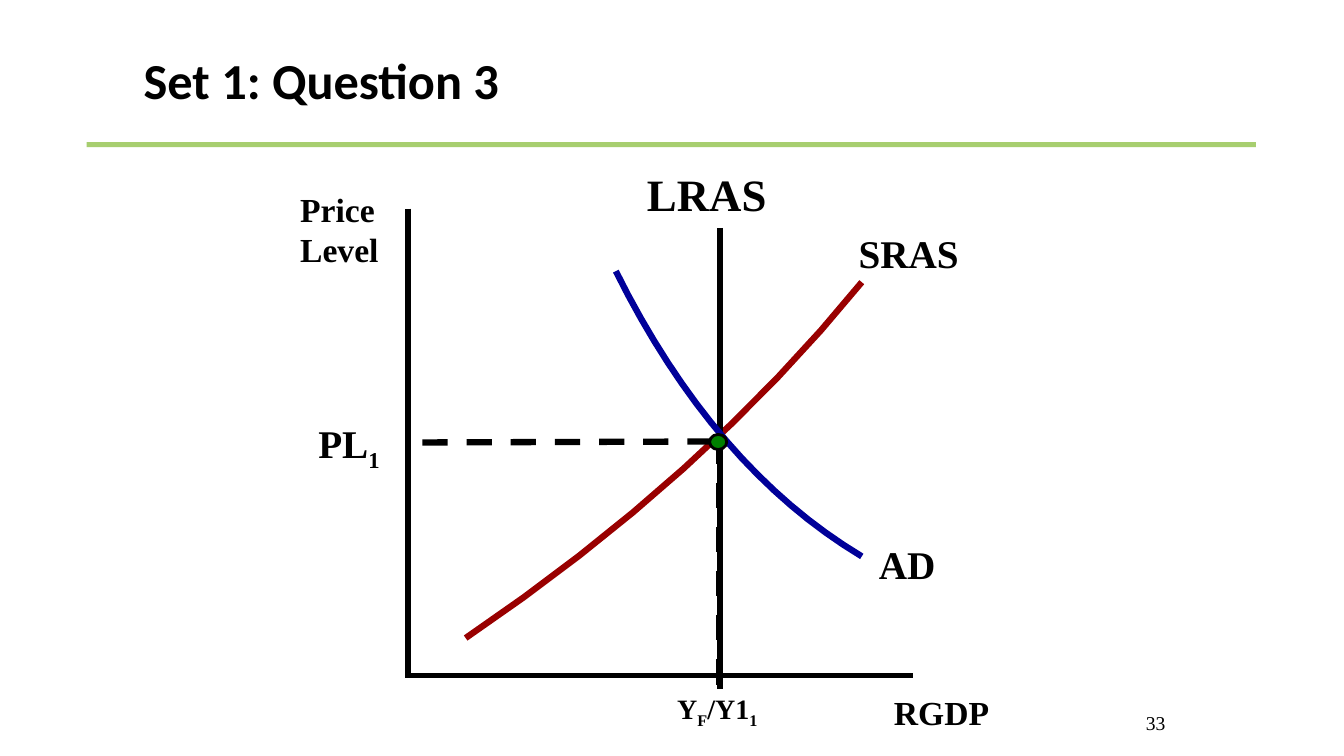
from dataclasses import dataclass

import pptx
import pptx.dml.color
import pptx.enum.dml
import pptx.enum.shapes
import pptx.enum.text
import pptx.oxml
import pptx.oxml.ns
import pptx.util

COLUMNS, ROWS = 80, 45
CELL = pptx.util.Inches(1) / 6
BLACK, GREEN, LIME = "000000", "008000", "A7CE6F"
RED, BLUE = "990000", "000099"
SERIF = "Times New Roman"
ALIGN = pptx.enum.text.PP_ALIGN
ANCHOR = pptx.enum.text.MSO_ANCHOR
SHAPE = pptx.enum.shapes.MSO_SHAPE

Point = tuple[float, float]
Box = tuple[float, float, float, float]


@dataclass
class Line:
    start: Point
    end: Point
    width: float = 4.5
    dashed: bool = False


@dataclass
class Curve:
    """A quadratic curve drawn as equal parameter steps."""
    start: Point
    control: Point
    end: Point
    steps: int
    color: str


@dataclass
class Label:
    text: str
    box: Box
    size: float


AXES = [
    Line((24.3, 12.42), (24.3, 40.38), width=4),
    Line((24.12, 40.2), (54.36, 40.2), width=4),
]
LRAS_LINE = Line((42.84, 13.56), (42.84, 41.04))
GUIDES = [
    Line((42.42, 26.28), (24.54, 26.34), dashed=True),
    Line((42.78, 26.1), (42.78, 40.92), dashed=True),
]
SRAS_CURVE = Curve((27.72, 37.98), (41.86, 28.41), (51.3, 16.8), 8, RED)
AD_CURVE = Curve((36.66, 16.14), (42.48, 27.84), (51.3, 33.12), 16, BLUE)

# An underscore starts or ends a subscript.
LABELS = [
    Label("SRAS", (50.52, 13.38, 7.74, 3.42), 28),
    Label("RGDP", (52.62, 40.92, 8.4, 3), 24),
    Label("PL_1", (18.36, 24.66, 6.12, 3.48), 28),
    Label("Y_F_/Y1_1", (39.72, 40.86, 8.58, 3.36), 20),
    Label("LRAS", (37.92, 9.66, 11.28, 3.78), 32),
    Label("AD", (51.72, 31.86, 5.4, 3.42), 28),
]


def cells(*counts: float) -> list[int]:
    """Turn counts of grid cells into slide lengths."""
    return [round(count * CELL) for count in counts]


def rgb(color: str) -> pptx.dml.color.RGBColor:
    return pptx.dml.color.RGBColor.from_string(color)


def set_line(shape, color: str, width: float) -> None:
    shape.line.color.rgb = rgb(color)
    shape.line.width = pptx.util.Pt(width)


def add_text(slide, text: str, box: Box, *, size: float, font: str = SERIF,
             bold: bool = True, align=ALIGN.LEFT, anchor=ANCHOR.TOP) -> None:
    frame = slide.shapes.add_textbox(*cells(*box)).text_frame
    frame.word_wrap = True
    frame.vertical_anchor = anchor
    paragraph = frame.paragraphs[0]
    paragraph.alignment = align
    for index, part in enumerate(text.split("_")):
        run = paragraph.add_run()
        run.text = part
        run.font.name = font
        run.font.size = pptx.util.Pt(size)
        run.font.bold = bold
        run.font.color.rgb = rgb(BLACK)
        if index % 2:
            run.font._element.set("baseline", "-25000")


def add_line(slide, line: Line) -> None:
    connector = slide.shapes.add_connector(
        pptx.enum.shapes.MSO_CONNECTOR.STRAIGHT, *cells(*line.start, *line.end))
    set_line(connector, BLACK, line.width)
    if line.dashed:
        connector.line.dash_style = pptx.enum.dml.MSO_LINE.DASH
    properties = connector._element.spPr
    properties.append(pptx.oxml.parse_xml(
        f"<a:effectLst {pptx.oxml.ns.nsdecls('a')}/>"))


def add_curve(slide, curve: Curve) -> None:
    points = []
    for step in range(curve.steps + 1):
        t = step / curve.steps
        points.append(cells(*(
            (1 - t) ** 2 * a + 2 * t * (1 - t) * b + t ** 2 * c
            for a, b, c in zip(curve.start, curve.control, curve.end))))
    builder = slide.shapes.build_freeform(*points[0])
    builder.add_line_segments(points[1:], close=False)
    shape = builder.convert_to_shape()
    shape.shadow.inherit = False
    shape.fill.background()
    set_line(shape, curve.color, 4.5)


def add_filled(slide, kind, box: Box, fill: str, line_width: float = 0) -> None:
    shape = slide.shapes.add_shape(kind, *cells(*box))
    shape.shadow.inherit = False
    shape.fill.solid()
    shape.fill.fore_color.rgb = rgb(fill)
    if line_width:
        set_line(shape, BLACK, line_width)
    else:
        shape.line.fill.background()


def main() -> None:
    presentation = pptx.Presentation()
    presentation.slide_width, presentation.slide_height = cells(COLUMNS, ROWS)
    slide = presentation.slides.add_slide(presentation.slide_layouts[6])

    add_filled(slide, SHAPE.RECTANGLE, (5.16, 8.46, 69.6, 0.3), LIME)
    add_text(slide, "Set 1: Question 3", (1.26, 3, 35.76, 3.42), size=36,
             font="Calibri", align=ALIGN.CENTER, anchor=ANCHOR.MIDDLE)
    add_text(slide, "Price Level", (17.28, 10.56, 9, 6.18), size=24,
             anchor=ANCHOR.MIDDLE)
    add_text(slide, "33", (57.48, 42, 12.48, 3), size=14, bold=False,
             align=ALIGN.RIGHT)

    for axis in AXES:
        add_line(slide, axis)
    add_curve(slide, SRAS_CURVE)
    add_line(slide, LRAS_LINE)
    for label in LABELS:
        add_text(slide, label.text, label.box, size=label.size)
    for guide in GUIDES:
        add_line(slide, guide)
    add_curve(slide, AD_CURVE)
    add_filled(slide, SHAPE.FLOWCHART_CONNECTOR, (42.24, 25.86, 1.02, 0.9),
               GREEN, line_width=2)

    presentation.save("out.pptx")


if __name__ == "__main__":
    main()
